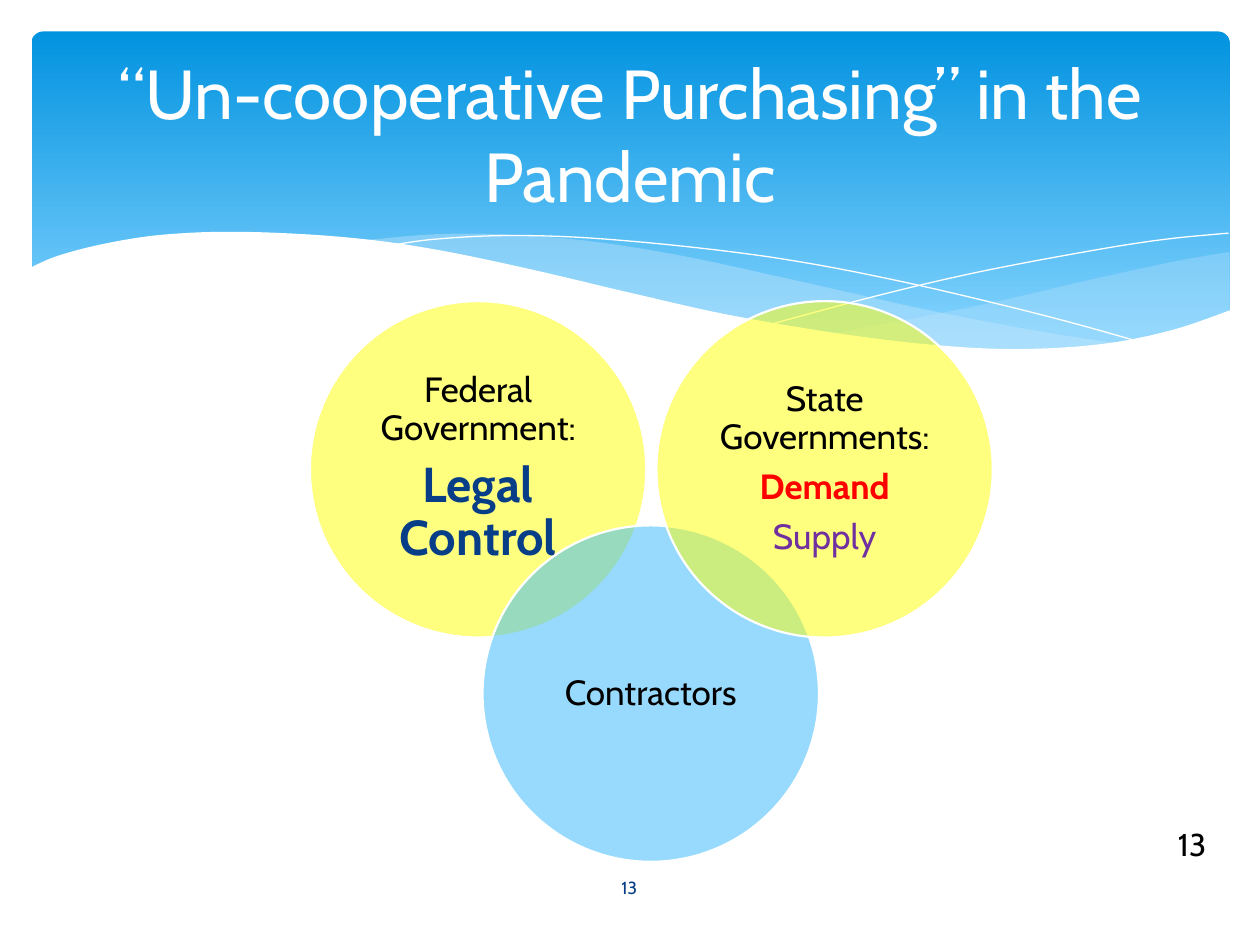
from dataclasses import dataclass

from lxml import etree
from pptx import Presentation
from pptx.dml.color import RGBColor
from pptx.enum import shapes, text
from pptx.oxml import ns
from pptx.util import Inches, Pt

FONT = "Cabin"
WHITE, BLACK, NAVY = "FFFFFF", "000000", "073E87"
YELLOW, SKY, MIST = "FFFF00", "31B6FD", "C6E7FC"
Point = tuple[float, float]


@dataclass
class Line:
    words: str
    size: float
    color: str = BLACK
    bold: bool = False


@dataclass
class Circle:
    left: float
    top: float
    color: str
    lines: list[Line]


@dataclass
class Wave:
    edges: list[list[Point]]  # each edge is smoothed, then joined to the next
    color: str
    opacity: int = 100
    filled: bool = True


def rgb(color: str) -> RGBColor:
    return RGBColor.from_string(color)


def paint(shape, color: str, opacity: int = 100) -> None:
    shape.shadow.inherit = False
    shape.fill.solid()
    shape.fill.fore_color.rgb = rgb(color)
    if opacity < 100:
        tint = shape.fill._xPr.find(ns.qn("a:solidFill"))[0]
        etree.SubElement(tint, ns.qn("a:alpha"), val=str(opacity * 1000))


def smooth(knots: list[Point], steps: int = 6) -> list[Point]:
    """Run a Catmull-Rom curve through the knots."""
    if len(knots) < 3:
        return knots
    padded = [knots[0], *knots, knots[-1]]
    curve = [knots[0]]
    for a, b, c, d in zip(padded, padded[1:], padded[2:], padded[3:]):
        for step in range(1, steps + 1):
            t = step / steps
            curve.append(tuple(
                0.5 * (2 * q + (r - p) * t + (2 * p - 5 * q + 4 * r - s) * t**2
                       + (3 * q - p - 3 * r + s) * t**3)
                for p, q, r, s in zip(a, b, c, d)))
    return curve


def draw_wave(slide, wave: Wave) -> None:
    points = [(Inches(x), Inches(y)) for edge in wave.edges for x, y in smooth(edge)]
    builder = slide.shapes.build_freeform(*points[0])
    builder.add_line_segments(points[1:], close=wave.filled)
    shape = builder.convert_to_shape()
    if wave.filled:
        paint(shape, wave.color, wave.opacity)
        shape.line.fill.background()
    else:
        shape.shadow.inherit = False
        shape.fill.background()
        shape.line.color.rgb = rgb(wave.color)
        shape.line.width = Pt(0)


def draw_text(slide, left: float, top: float, width: float, height: float,
              lines: list[Line], align=text.PP_ALIGN.CENTER,
              anchor=text.MSO_ANCHOR.MIDDLE, inset: float | None = None,
              spacing: float = 1, gap: float = 0) -> None:
    frame = slide.shapes.add_textbox(
        Inches(left), Inches(top), Inches(width), Inches(height)).text_frame
    frame.word_wrap = True
    frame.vertical_anchor = anchor
    if inset is not None:
        frame.margin_left = frame.margin_right = Inches(inset)
        frame.margin_top = frame.margin_bottom = Inches(inset)
    for index, line in enumerate(lines):
        paragraph = frame.paragraphs[0] if index == 0 else frame.add_paragraph()
        paragraph.alignment = align
        paragraph.line_spacing = spacing
        paragraph.space_after = Pt(line.size * gap)
        run = paragraph.add_run()
        run.text = line.words
        run.font.name, run.font.size = FONT, Pt(line.size)
        run.font.bold = line.bold
        run.font.color.rgb = rgb(line.color)


def draw_circle(slide, circle: Circle) -> None:
    diameter, margin = 2.67, 0.39
    disc = slide.shapes.add_shape(
        shapes.MSO_SHAPE.OVAL, Inches(circle.left), Inches(circle.top),
        Inches(diameter), Inches(diameter))
    paint(disc, circle.color, 50)
    disc.line.color.rgb = rgb(WHITE)
    disc.line.width = Pt(1.25)
    side = diameter - 2 * margin
    draw_text(slide, circle.left + margin, circle.top + margin, side, side,
              circle.lines, inset=0.08, spacing=0.9, gap=0.35)


def draw_banner(slide) -> None:
    banner = slide.shapes.add_shape(
        shapes.MSO_SHAPE.ROUNDED_RECTANGLE,
        Inches(0.25), Inches(0.25), Inches(9.51), Inches(2.7))
    banner.adjustments[0] = 0.034
    banner.shadow.inherit = False
    banner.line.fill.background()
    banner.fill.gradient()
    banner.fill.gradient_angle = 270
    for stop, position, color in zip(
            banner.fill.gradient_stops, (0, 0.9), ("0293E0", "83D3FE")):
        stop.position = position
        stop.color.rgb = rgb(color)


WAVES = [
    # Right-hand veil
    Wave([[(9.76, 2), (9.35, 2.07), (8.61, 2.23), (7.79, 2.42), (6.61, 2.65)],
          [(6.61, 2.65), (7.19, 2.72), (7.69, 2.77), (8.14, 2.78), (8.63, 2.75),
           (9.13, 2.67), (9.49, 2.57), (9.76, 2.47)]], MIST, 29),
    # Long veil
    Wave([[(8.93, 2.73), (8.37, 2.65), (7.41, 2.47), (6.29, 2.22), (5.41, 2.03),
           (4.65, 1.91), (3.99, 1.86), (3.44, 1.86), (2.86, 1.91)],
          [(2.86, 1.91), (3.62, 2.03), (4.49, 2.22), (5.3, 2.4), (6.18, 2.58),
           (6.95, 2.7), (7.61, 2.77), (8.18, 2.78), (8.57, 2.77), (8.93, 2.73)]],
         MIST, 40),
    # Hairlines
    Wave([[(3.09, 1.95), (3.44, 1.9), (4.01, 1.87), (4.69, 1.89), (5.56, 1.97),
           (6.36, 2.08), (7.27, 2.26), (8.31, 2.51), (9.07, 2.72)]],
         WHITE, filled=False),
    Wave([[(6.13, 2.57), (6.95, 2.35), (7.76, 2.16), (8.66, 1.99),
           (9.24, 1.9), (9.75, 1.85)]], WHITE, filled=False),
    # White lower edge of the banner
    Wave([[(9.77, 2.46), (9.3, 2.62), (8.75, 2.73), (8.09, 2.77), (7.44, 2.74),
           (6.68, 2.65), (5.79, 2.5), (5.03, 2.33), (4.18, 2.13), (3.4, 1.97),
           (2.71, 1.88), (1.93, 1.84), (1.32, 1.86), (0.85, 1.93), (0.46, 2.03),
           (0.23, 2.13)],
          [(0.23, 3.29), (9.77, 3.29)]], WHITE),
]

CIRCLES = [
    Circle(2.46, 2.39, YELLOW, [Line("Federal Government:", 20),
                                Line("Legal Control", 28, NAVY, True)]),
    Circle(3.83, 4.17, SKY, [Line("Contractors", 20)]),
    Circle(5.21, 2.39, YELLOW, [Line("State Governments:", 20),
                                Line("Demand", 20, "FF0000", True),
                                Line("Supply", 20, "7030A0")]),
]


def main() -> None:
    deck = Presentation()
    deck.slide_width, deck.slide_height = Inches(10), Inches(7.5)
    slide = deck.slides.add_slide(deck.slide_layouts[6])

    # Banner and waves
    draw_banner(slide)
    for wave in WAVES:
        draw_wave(slide, wave)

    # Title and page numbers
    draw_text(slide, 9.25, 6.5, 0.58, 0.4, [Line("13", 18)],
              text.PP_ALIGN.LEFT, text.MSO_ANCHOR.TOP)
    draw_text(slide, 0.5, 0.37, 9, 1.37,
              [Line("“Un-cooperative Purchasing” in the Pandemic", 39.6, WHITE)])
    draw_text(slide, 4.36, 6.84, 1.27, 0.4, [Line("13", 10, NAVY)])

    # Overlapping circles
    for circle in CIRCLES:
        draw_circle(slide, circle)

    deck.save("out.pptx")


if __name__ == "__main__":
    main()
